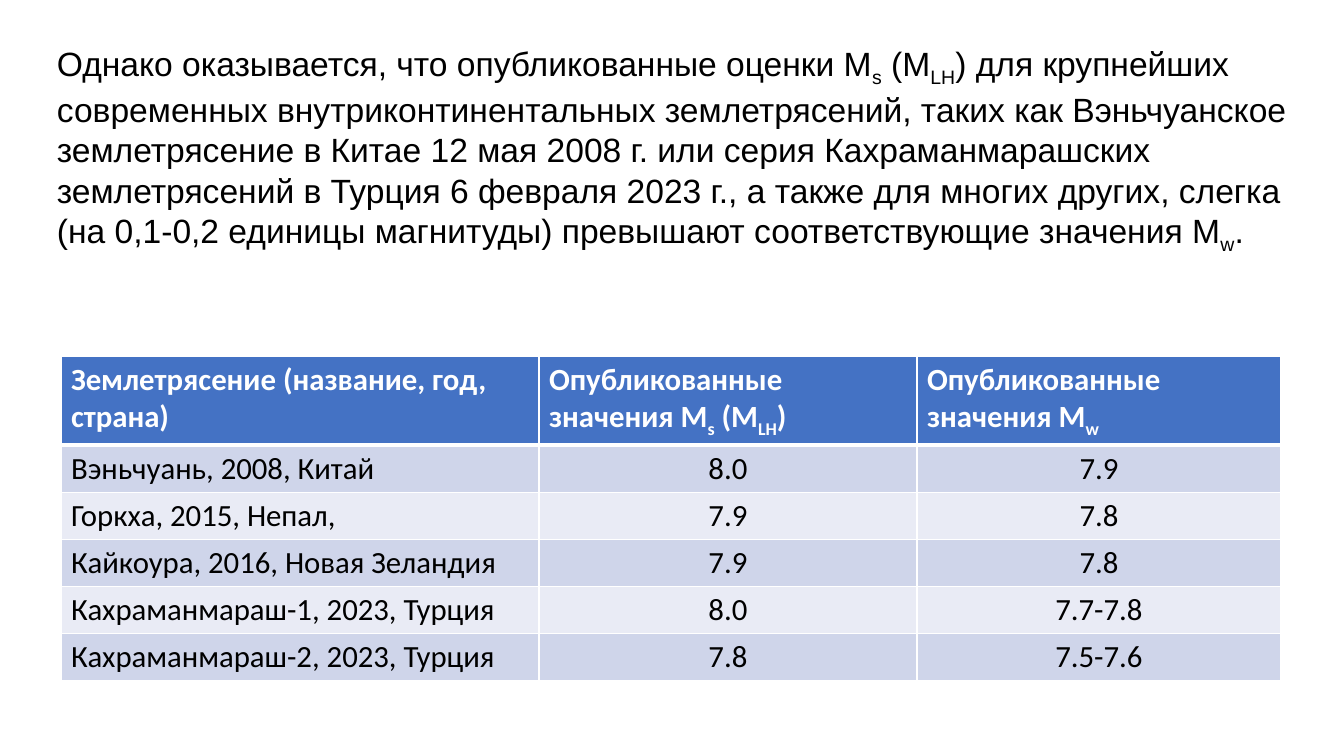
"""Build a slide comparing published Ms and Mw magnitudes of large earthquakes."""
from dataclasses import dataclass

from lxml.etree import SubElement
from pptx import Presentation
from pptx.dml.color import RGBColor
from pptx.enum.text import MSO_AUTO_SIZE, PP_ALIGN
from pptx.oxml.ns import qn
from pptx.util import Pt

PX = 914400 / 100.8


@dataclass(frozen=True)
class Theme:
    text: str = "000000"
    white: str = "FFFFFF"
    header: str = "4472C4"
    bands: tuple = ("CFD5EA", "E9EBF5")
    statement_font: str = "Arial"
    table_font: str = "Calibri"
    statement_size: int = 24
    table_size: int = 22


theme = Theme()


def px(*lengths):
    return [round(length * PX) for length in lengths]


def write(paragraph, marked_text, font, size, color, bold=False):
    """Write text in which every second piece between bars is a subscript."""
    for index, piece in enumerate(marked_text.split("|")):
        run = paragraph.add_run()
        run.text = piece
        run.font.name = font
        run.font.size = Pt(size)
        run.font.bold = bold
        run.font.color.rgb = RGBColor.from_string(color)
        if index % 2:
            run.font._element.set("baseline", "-25000")


presentation = Presentation()
presentation.slide_width, presentation.slide_height = px(1344, 756)
slide = presentation.slides.add_slide(presentation.slide_layouts[6])

statement = slide.shapes.add_textbox(*px(47, 38, 1259, 214)).text_frame
statement.word_wrap = True
statement.auto_size = MSO_AUTO_SIZE.SHAPE_TO_FIT_TEXT
write(
    statement.paragraphs[0],
    "Однако оказывается, что опубликованные оценки M|s| (M|LH|) для крупнейших "
    "современных внутриконтинентальных землетрясений, таких как Вэньчуанское "
    "землетрясение в Китае 12 мая 2008 г. или серия Кахраманмарашских "
    "землетрясений в Турция 6 февраля 2023 г., а также для многих других, слегка "
    "(на 0,1-0,2 единицы магнитуды) превышают соответствующие значения M|w|.",
    theme.statement_font, theme.statement_size, theme.text,
)

earthquakes = [
    ("Землетрясение (название, год, страна)",
     "Опубликованные значения M|s| (M|LH|)", "Опубликованные значения M|w"),
    ("Вэньчуань, 2008, Китай", "8.0", "7.9"),
    ("Горкха, 2015, Непал,", "7.9", "7.8"),
    ("Кайкоура, 2016, Новая Зеландия", "7.9", "7.8"),
    ("Кахраманмараш-1, 2023, Турция", "8.0", "7.7-7.8"),
    ("Кахраманмараш-2, 2023, Турция", "7.8", "7.5-7.6"),
]
column_widths = px(478, 378, 364)
header_height, row_height = px(87, 47)

magnitudes = slide.shapes.add_table(
    len(earthquakes), len(column_widths), *px(61, 356, 1220, 322)).table
for column, width in zip(magnitudes.columns, column_widths):
    column.width = width

for row_index, entries in enumerate(earthquakes):
    is_header = row_index == 0
    magnitudes.rows[row_index].height = header_height if is_header else row_height
    fill = theme.header if is_header else theme.bands[(row_index - 1) % 2]
    for column_index, entry in enumerate(entries):
        cell = magnitudes.cell(row_index, column_index)
        paragraph = cell.text_frame.paragraphs[0]
        write(paragraph, entry, theme.table_font, theme.table_size,
              theme.white if is_header else theme.text, is_header)
        if column_index and not is_header:
            paragraph.alignment = PP_ALIGN.CENTER

        properties = cell._tc.get_or_add_tcPr()
        for side in ("lnL", "lnR", "lnT", "lnB"):
            under_header = (row_index, side) in ((0, "lnB"), (1, "lnT"))
            border = SubElement(properties, qn(f"a:{side}"), w=str(Pt(3 if under_header else 1)))
            SubElement(SubElement(border, qn("a:solidFill")), qn("a:srgbClr"), val=theme.white)
        cell.fill.solid()
        cell.fill.fore_color.rgb = RGBColor.from_string(fill)

presentation.save("out.pptx")
